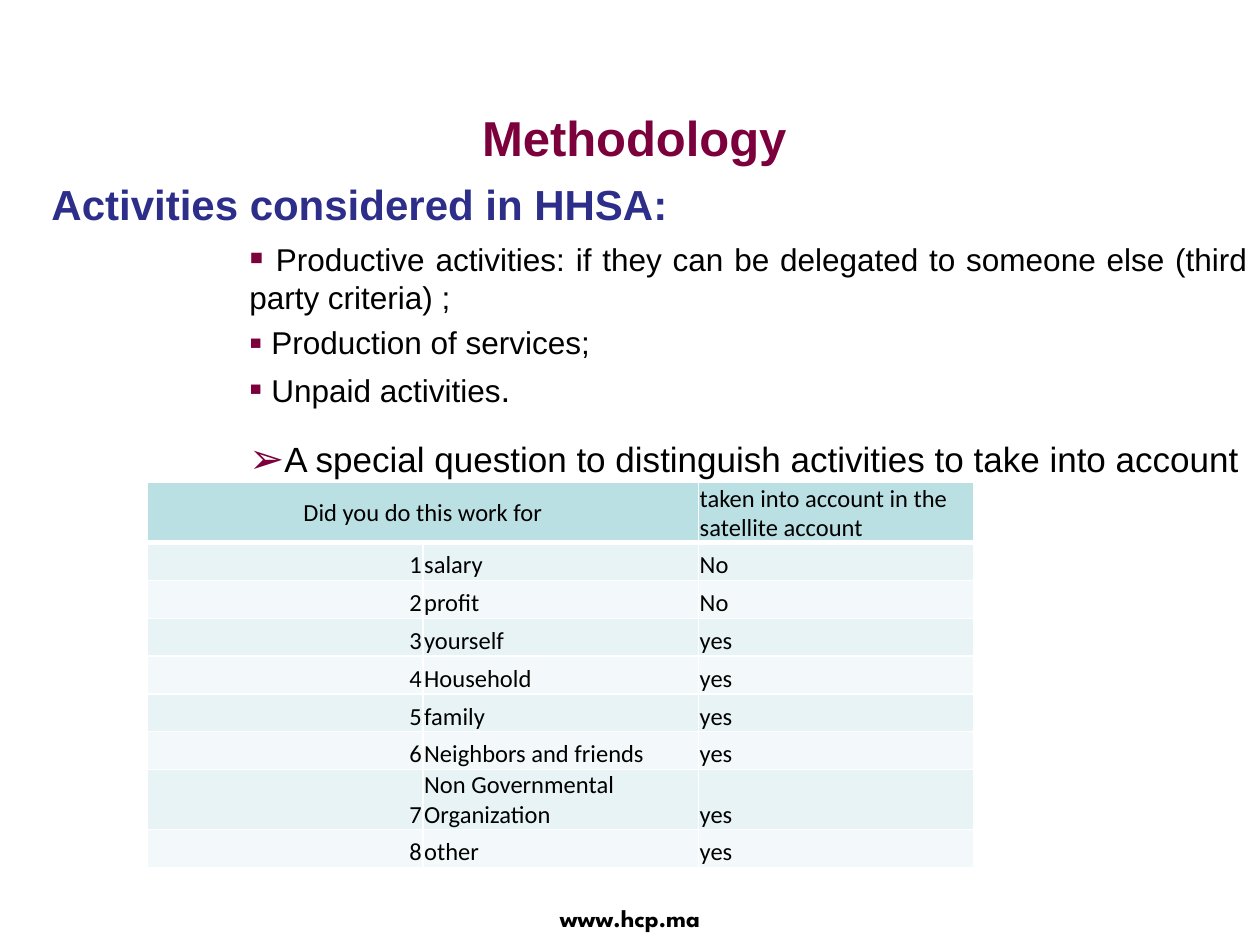
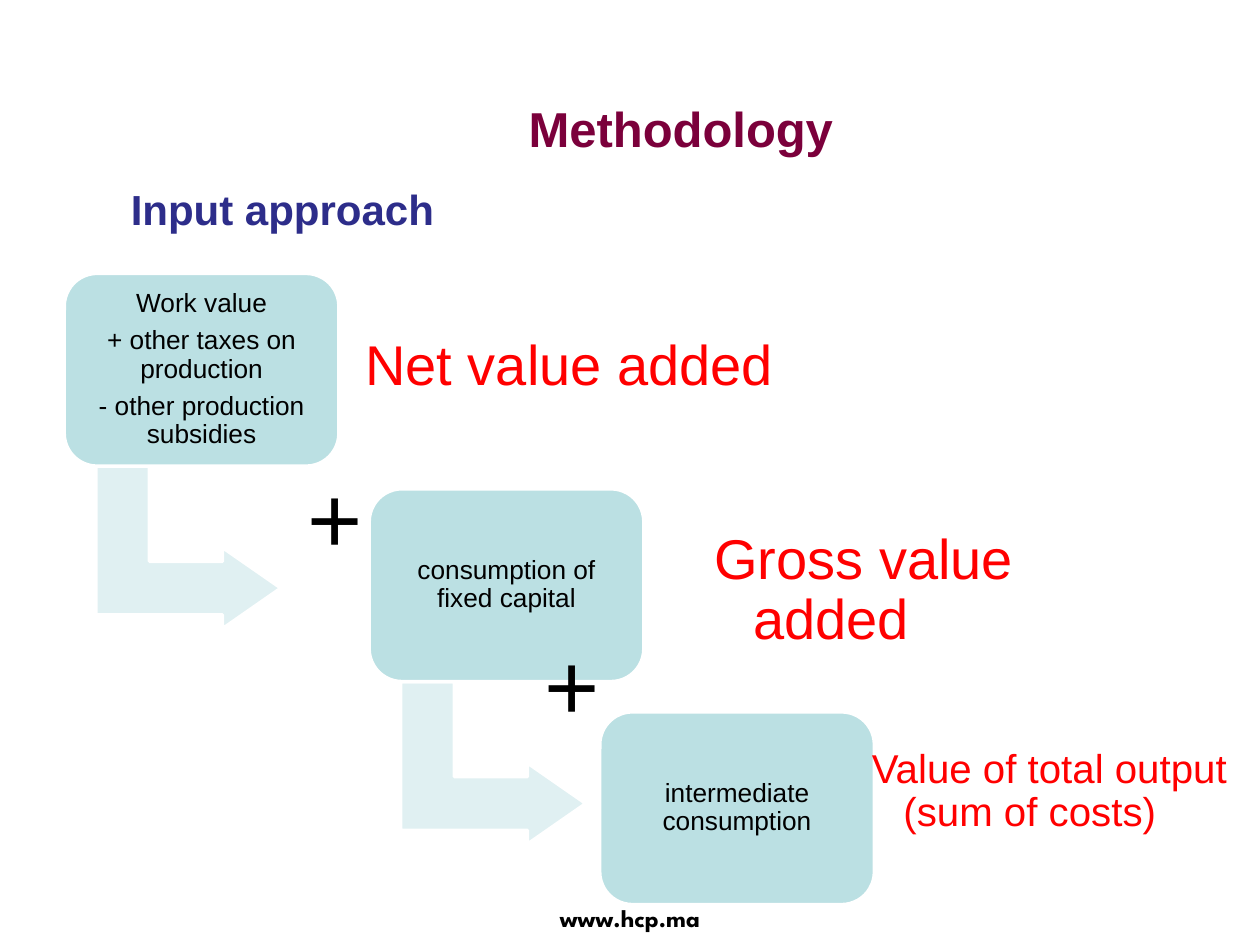
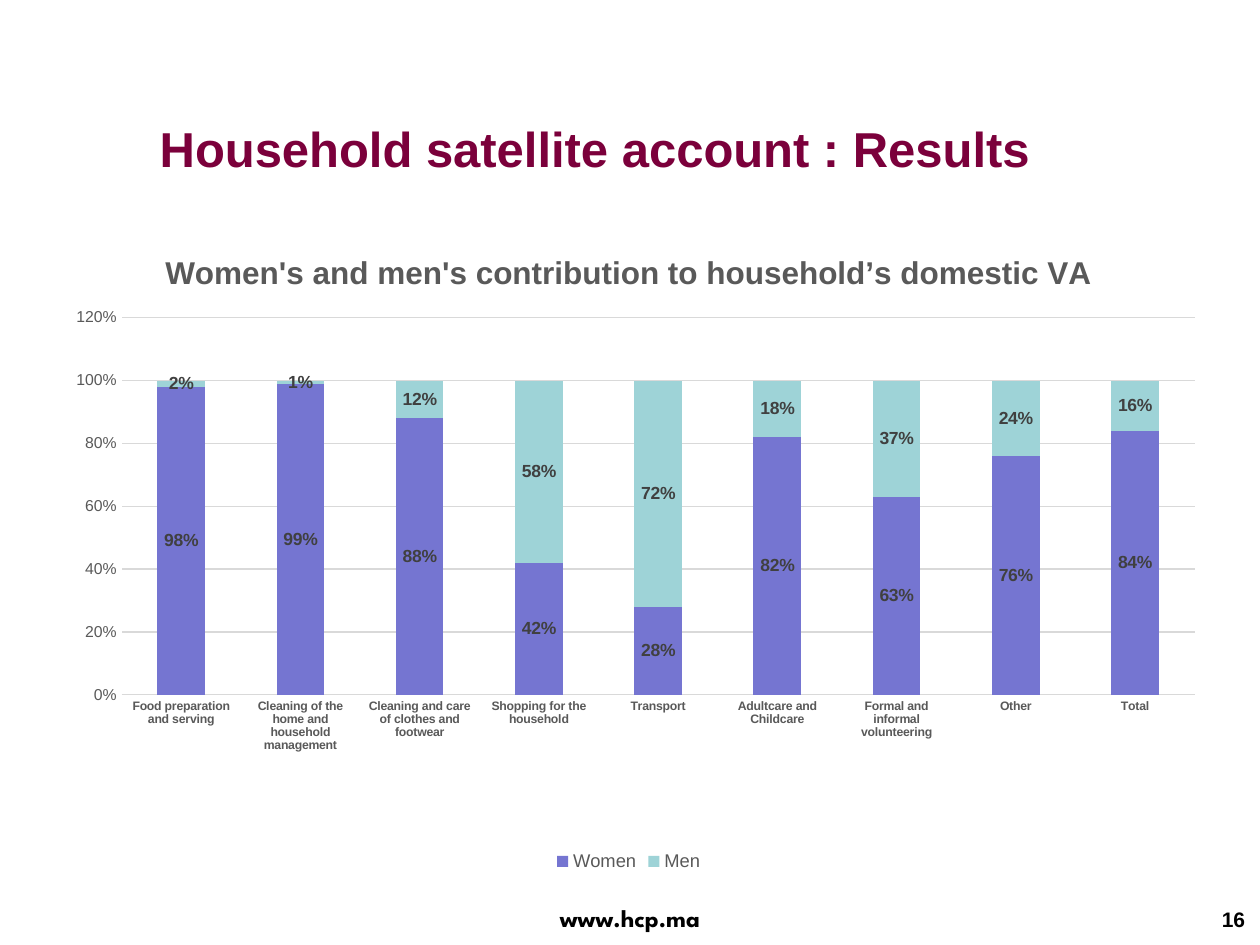
from lxml.etree import SubElement
from pptx import Presentation
from pptx.chart.data import CategoryChartData
from pptx.dml.color import RGBColor
from pptx.enum.chart import XL_CHART_TYPE as ChartType, XL_LEGEND_POSITION as LegendPosition
from pptx.enum.chart import XL_TICK_MARK as TickMark
from pptx.enum.shapes import MSO_SHAPE as Preset
from pptx.enum.text import MSO_ANCHOR as Anchor, PP_ALIGN as Align
from pptx.oxml import parse_xml
from pptx.oxml.ns import nsdecls, qn
from pptx.util import Inches, Pt

SLIDE_WIDTH, SLIDE_HEIGHT = Inches(10), Inches(7.5)
COLUMN, ROW = SLIDE_WIDTH / 100, SLIDE_HEIGHT / 75

FONT, TABLE_FONT, FOOTER_FONT = "Arial", "Calibri", "League Spartan"
BLACK, WHITE, RED = "000000", "FFFFFF", "FF0000"
WINE, NAVY, GREY, DARK_GREY, LIGHT_GREY = "7B003B", "2D2D8A", "595959", "404040", "D9D9D9"
TEAL, PALE_TEAL, TEAL_BANDS = "BBE0E3", "E0F0F2", ("F3F9FA", "E7F3F4")

ACTIVITIES = [
    ("▪", 1, [(" ", 20), ("Productive activities: if they can be delegated to someone else "
                          "(third party criteria) ;", 18)]),
    ("▪", 1, [(" Production of services;", 18)]),
    ("▪", 1, [(" Unpaid activities", 18), (".", 20)]),
    ("➢", 1.5, [("A special question to distinguish activities to take into account", 20)]),
]
BENEFICIARIES = [
    ("salary", "No"), ("profit", "No"), ("yourself", "yes"), ("Household", "yes"),
    ("family", "yes"), ("Neighbors and friends", "yes"),
    ("Non Governmental Organization", "yes"), ("other", "yes"),
]
STEP_WIDTH, STEP_HEIGHT = 21.8, 15.3
STEPS = [
    (5.1, 21.7, ["Work value", "+ other taxes on production", "- other production subsidies"],
     "Net value added", 32, (22.7, 1.3, 41.7, 12.3), 0.31),
    (29.3, 38.8, ["consumption of fixed capital"],
     "Gross value added", 32, (26.2, 2, 37.7, 12.3), 0.31),
    (47.6, 56.5, ["intermediate consumption"],
     "Value of total output (sum of costs)", 23, (20.4, 0.2, 31, 12.3), 0.25),
]
WOMEN_SHARES = {
    "Food preparation and serving": 0.98,
    "Cleaning of the home and household management": 0.99,
    "Cleaning and care of clothes and footwear": 0.88,
    "Shopping for the household": 0.42,
    "Transport": 0.28,
    "Adultcare and Childcare": 0.82,
    "Formal and informal volunteering": 0.63,
    "Other": 0.76,
    "Total": 0.84,
}


def color(value):
    """Turn a hex string into a colour."""
    return RGBColor.from_string(value)


def area(left, top, width, height):
    """Turn grid columns and rows into slide lengths."""
    return round(left * COLUMN), round(top * ROW), round(width * COLUMN), round(height * ROW)


def style(font, size, hex_color=BLACK, bold=False, name=FONT):
    """Format one font."""
    font.name, font.size, font.bold = name, Pt(size), bold
    font.color.rgb = color(hex_color)


def fill_text(frame, lines, size, hex_color=BLACK, bold=False, name=FONT, align=Align.LEFT,
              anchor=Anchor.TOP, inset=None, spacing=None, space_after=None):
    """Write lines into a text frame and format them alike."""
    frame.text = "\n".join(lines)
    frame.word_wrap = True
    frame.vertical_anchor = anchor
    if inset is not None:
        frame.margin_left = frame.margin_right = Inches(inset)
        frame.margin_top = frame.margin_bottom = Inches(inset)
    for paragraph in frame.paragraphs:
        paragraph.alignment = align
        paragraph.line_spacing = spacing
        if space_after is not None:
            paragraph.space_after = Pt(space_after)
        for run in paragraph.runs:
            style(run.font, size, hex_color, bold, name)


def add_text(slide, box, text, size, **options):
    """Add a one-paragraph text box and return its frame."""
    frame = slide.shapes.add_textbox(*area(*box)).text_frame
    fill_text(frame, [text], size, **options)
    return frame


def add_preset(slide, preset, box, fill, adjustments):
    """Add a flat shape with a white outline."""
    shape = slide.shapes.add_shape(preset, *area(*box))
    shape.shadow.inherit = False
    shape.fill.solid()
    shape.fill.fore_color.rgb = color(fill)
    shape.line.color.rgb = color(WHITE)
    shape.line.width = Pt(2)
    for index, value in enumerate(adjustments):
        shape.adjustments[index] = value
    return shape


def add_titled_slide(presentation, title, box):
    """Add a title-only slide with its title and footer."""
    slide = presentation.slides.add_slide(presentation.slide_layouts[5])
    shape = slide.shapes.title
    shape.left, shape.top, shape.width, shape.height = area(*box)
    fill_text(shape.text_frame, [title], 28, WINE, bold=True, align=Align.CENTER,
              anchor=Anchor.MIDDLE)
    add_text(slide, (38.2, 71.2, 23.6, 3.3), "www.hcp.ma", 14, bold=True,
             name=FOOTER_FONT, align=Align.CENTER)
    return slide


def set_bullet(paragraph, character):
    """Give a paragraph an indented wine-coloured bullet."""
    properties = paragraph._p.get_or_add_pPr()
    properties.set("marL", str(Inches(1.57)))
    properties.set("indent", "0")
    bullet_color = SubElement(properties, qn("a:buClr"))
    SubElement(bullet_color, qn("a:srgbClr"), val=WINE)
    SubElement(properties, qn("a:buSzPct"), val="120000")
    SubElement(properties, qn("a:buFont"), typeface=FONT)
    SubElement(properties, qn("a:buChar"), char=character)


def add_activities(slide, box):
    """Write the heading and the bulleted activities."""
    frame = add_text(slide, box, "Activities considered in HHSA:", 24, hex_color=NAVY,
                     bold=True, align=Align.JUSTIFY, spacing=1.5)
    for character, spacing, runs in ACTIVITIES:
        paragraph = frame.add_paragraph()
        set_bullet(paragraph, character)
        paragraph.alignment = Align.JUSTIFY
        paragraph.line_spacing = spacing
        paragraph.space_before = Pt(4)
        for text, size in runs:
            run = paragraph.add_run()
            run.text = text
            style(run.font, size)


def set_borders(cell, bottom_width):
    """Draw white borders round a cell."""
    properties = cell._tc.get_or_add_tcPr()
    widths = {"lnL": 1, "lnR": 1, "lnT": 1, "lnB": bottom_width}
    for index, (side, width) in enumerate(widths.items()):
        properties.insert(index, parse_xml(
            f'<a:{side} {nsdecls("a")} w="{Pt(width)}"><a:solidFill>'
            f'<a:srgbClr val="{WHITE}"/></a:solidFill></a:{side}>'))


def add_beneficiary_table(slide, box):
    """Add the table of answers and their treatment."""
    rows = [("Did you do this work for", "", "taken into account in the satellite account")]
    rows += [(str(number), *answer) for number, answer in enumerate(BENEFICIARIES, 1)]
    table = slide.shapes.add_table(len(rows), 3, *area(*box)).table
    for row_index, texts in enumerate(rows):
        header = row_index == 0
        table.rows[row_index].height = round(3 * ROW)
        for column_index, text in enumerate(texts):
            cell = table.cell(row_index, column_index)
            first_align = Align.CENTER if header else Align.RIGHT
            fill_text(cell.text_frame, [text], 14, name=TABLE_FONT,
                      align=first_align if column_index == 0 else Align.LEFT)
            cell.vertical_anchor = Anchor.MIDDLE if header else Anchor.BOTTOM
            cell.margin_left = cell.margin_right = cell.margin_top = Inches(0.01)
            cell.margin_bottom = 0
            cell.fill.solid()
            cell.fill.fore_color.rgb = color(TEAL if header else TEAL_BANDS[row_index % 2])
            set_borders(cell, 3 if header else 1)
    table.cell(0, 0).merge(table.cell(0, 1))


def add_step(slide, left, top, lines, result, size, result_box, indent, has_arrow):
    """Add a cost box, its result and the arrow to the next box."""
    if has_arrow:
        arrow = add_preset(slide, Preset.BENT_UP_ARROW, (left + 3.4, top + 14.4, 12.9, 14.7),
                           PALE_TEAL, (0.33, 0.25, 0.36))
        arrow.rotation = 90
    card = add_preset(slide, Preset.ROUNDED_RECTANGLE, (left, top, STEP_WIDTH, STEP_HEIGHT),
                      TEAL, (0.17,))
    fill_text(card.text_frame, lines, 15, align=Align.CENTER, anchor=Anchor.MIDDLE,
              inset=0.06, spacing=0.9, space_after=5)
    column, row, width, height = result_box
    frame = add_text(slide, (left + column, top + row, width, height), result, size,
                     hex_color=RED, anchor=Anchor.MIDDLE, inset=0.12, spacing=0.9)
    properties = frame.paragraphs[0]._p.get_or_add_pPr()
    properties.set("marL", str(Inches(indent)))
    properties.set("indent", str(-Inches(indent)))


def set_plot_layout(chart, left, top, width, height):
    """Place the inner plot area by shares of the chart."""
    plot_area = chart._chartSpace.chart.plotArea
    for layout in plot_area.findall(qn("c:layout")):
        plot_area.remove(layout)
    shares = {"x": left, "y": top, "w": width, "h": height}
    values = "".join(f'<c:{key} val="{share}"/>' for key, share in shares.items())
    plot_area.insert(0, parse_xml(
        f'<c:layout {nsdecls("c")}><c:manualLayout><c:layoutTarget val="inner"/>'
        f'<c:xMode val="edge"/><c:yMode val="edge"/>{values}</c:manualLayout></c:layout>'))


def format_axes(chart):
    """Format both axes and the gridlines."""
    for axis, size, bold in ((chart.category_axis, 7, True), (chart.value_axis, 9, False)):
        axis.major_tick_mark = axis.minor_tick_mark = TickMark.NONE
        style(axis.tick_labels.font, size, GREY, bold)
    category_line = chart.category_axis.format.line
    category_line.color.rgb = color(LIGHT_GREY)
    category_line.width = Pt(0.5)
    values = chart.value_axis
    values.minimum_scale, values.maximum_scale, values.major_unit = 0, 1.2, 0.2
    values.tick_labels.number_format = "0%"
    values.tick_labels.number_format_is_linked = False
    values.format.line.fill.background()
    values.major_gridlines.format.line.color.rgb = color(LIGHT_GREY)
    values.major_gridlines.format.line.width = Pt(0.75)


def add_contribution_chart(slide, box):
    """Add the stacked columns of women's and men's shares."""
    data = CategoryChartData(number_format="0%")
    data.categories = list(WOMEN_SHARES)
    data.add_series("Women", WOMEN_SHARES.values())
    data.add_series("Men", [round(1 - share, 2) for share in WOMEN_SHARES.values()])
    chart = slide.shapes.add_chart(ChartType.COLUMN_STACKED, *area(*box), data).chart
    style(chart.font, 10)
    title = chart.chart_title.text_frame
    title.text = "Women's and men's contribution to household’s domestic VA"
    style(title.paragraphs[0].runs[0].font, 18, GREY, bold=True)
    chart.has_legend = True
    chart.legend.position = LegendPosition.BOTTOM
    chart.legend.include_in_layout = False
    style(chart.legend.font, 10.5, GREY)
    format_axes(chart)
    plot = chart.plots[0]
    plot.gap_width, plot.overlap, plot.vary_by_categories = 150, 100, False
    for series, fill in zip(plot.series, ("7575D1", "9ED3D7")):
        series.format.fill.solid()
        series.format.fill.fore_color.rgb = color(fill)
        labels = series.data_labels
        labels.show_value = True
        labels.number_format, labels.number_format_is_linked = "0%", False
        style(labels.font, 10, DARK_GREY, bold=True)
    set_plot_layout(chart, 0.07, 0.14, 0.91, 0.58)


def build_activities_slide(presentation):
    """Build the slide on the activities considered."""
    slide = add_titled_slide(presentation, " Methodology", (10.2, 6.8, 79.2, 8.1))
    add_activities(slide, (3.1, 11.7, 96.9, 57.8))
    add_beneficiary_table(slide, (11.7, 38.3, 65.6, 27))


def build_input_slide(presentation):
    """Build the slide on the input approach."""
    slide = add_titled_slide(presentation, " Methodology", (11.7, 3.9, 83.6, 12.5))
    for index, step in enumerate(STEPS):
        add_step(slide, *step, has_arrow=index < len(STEPS) - 1)
    for left, top in ((23.4, 36.4), (42.2, 49.7)):
        add_text(slide, (left, top, 6.4, 9.1), "+", 54, align=Align.CENTER, inset=0)
    add_text(slide, (9.4, 14.1, 29.7, 5), "Input approach", 24, hex_color=NAVY, bold=True)


def build_results_slide(presentation):
    """Build the slide with the results chart."""
    slide = add_titled_slide(presentation, "Household satellite account : Results",
                             (2.3, 5.5, 89.8, 12.5))
    add_text(slide, (84.6, 71.2, 15.2, 3.5), "16", 12, bold=True, align=Align.RIGHT,
             anchor=Anchor.MIDDLE)
    add_contribution_chart(slide, (3.1, 18, 93.6, 51.6))


def main():
    """Build and save the presentation."""
    presentation = Presentation()
    presentation.slide_width, presentation.slide_height = SLIDE_WIDTH, SLIDE_HEIGHT
    build_activities_slide(presentation)
    build_input_slide(presentation)
    build_results_slide(presentation)
    presentation.save("out.pptx")


if __name__ == "__main__":
    main()
